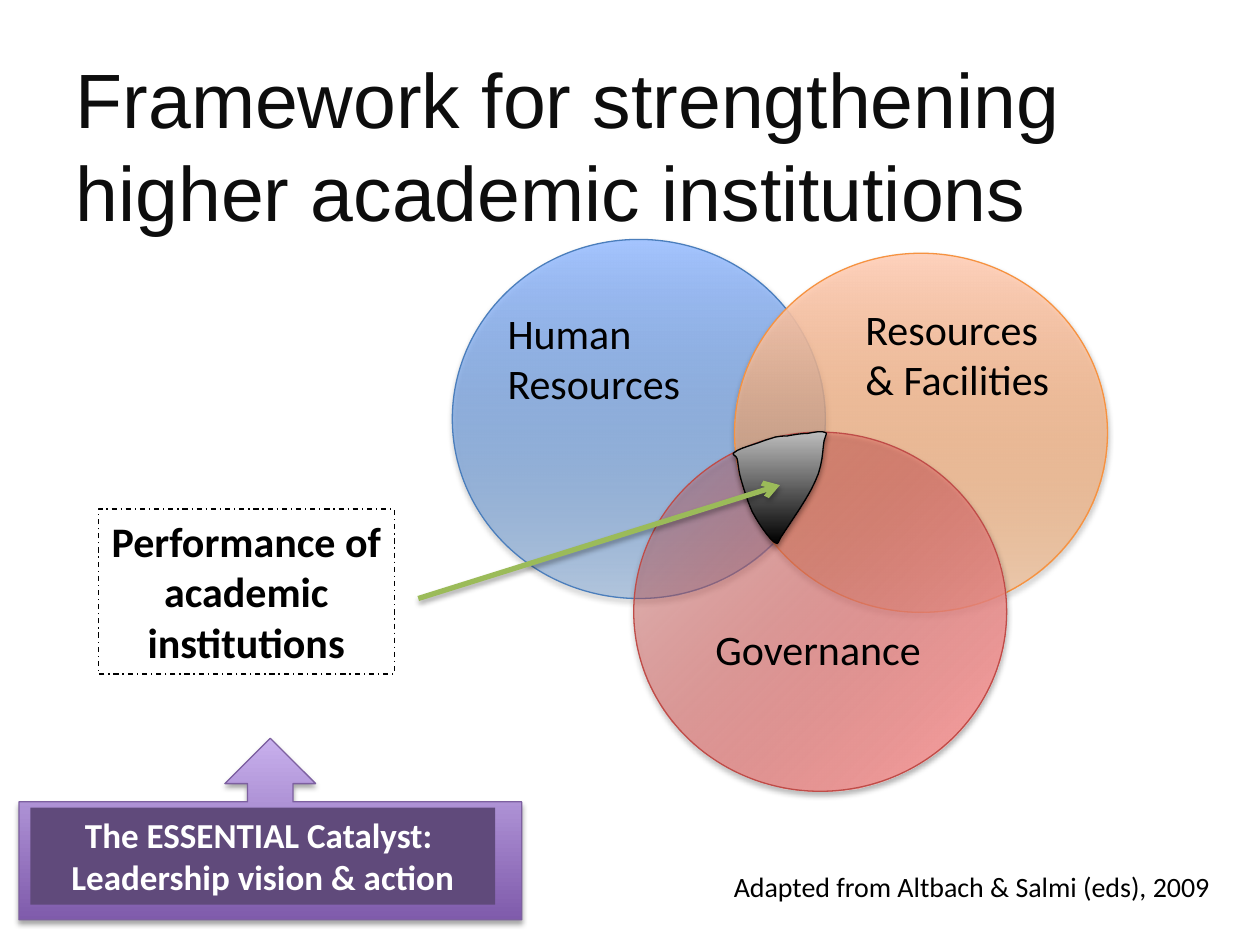
import pptx
import pptx.util
import pptx.dml.color
import pptx.enum.dml
import pptx.enum.shapes
import pptx.enum.text
import pptx.oxml.ns
from lxml import etree

Inches = pptx.util.Inches
Pt = pptx.util.Pt
RGBColor = pptx.dml.color.RGBColor
SHAPE = pptx.enum.shapes.MSO_SHAPE
ALIGN = pptx.enum.text.PP_ALIGN
AUTO_SIZE = pptx.enum.text.MSO_AUTO_SIZE
qn = pptx.oxml.ns.qn

BLACK = RGBColor(0x00, 0x00, 0x00)
WHITE = RGBColor(0xFF, 0xFF, 0xFF)
TITLE_INK = RGBColor(0x0D, 0x0D, 0x0D)
SILVER = RGBColor(0xBD, 0xBD, 0xBD)
GREEN = RGBColor(0x9B, 0xBB, 0x59)
PLUM = RGBColor(0x60, 0x4A, 0x7B)
PURPLE = RGBColor(0x7F, 0x5B, 0xAB)
LILAC = RGBColor(0xC8, 0xB0, 0xED)
PURPLE_EDGE = RGBColor(0x7D, 0x60, 0xA0)
BLUE = RGBColor(0x3F, 0x80, 0xCE)
SKY = RGBColor(0xA4, 0xC4, 0xFF)
BLUE_EDGE = RGBColor(0x4B, 0x7E, 0xBC)
ORANGE = RGBColor(0xFF, 0x95, 0x3E)
PEACH = RGBColor(0xFF, 0xD2, 0xBD)
ORANGE_EDGE = RGBColor(0xF6, 0x92, 0x40)
RED = RGBColor(0xD1, 0x40, 0x3C)
PINK = RGBColor(0xFF, 0xA6, 0xA5)
RED_EDGE = RGBColor(0xBF, 0x4C, 0x48)

SHADOW = (
    '<a:effectLst xmlns:a="http://schemas.openxmlformats.org/drawingml/2006/main">'
    '<a:outerShdw blurRad="40000" dist="23000" dir="5400000" rotWithShape="0">'
    '<a:srgbClr val="000000"><a:alpha val="35000"/></a:srgbClr>'
    '</a:outerShdw></a:effectLst>'
)


def style_shaded(shape, bottom, top, edge, opacity=100):
    shape.fill.gradient()
    shape.fill.gradient_angle = 90
    for stop, color in zip(shape.fill.gradient_stops, (bottom, top)):
        stop.color.rgb = color
    if opacity < 100:
        first_color = shape._element.spPr.find(".//" + qn("a:srgbClr"))
        etree.SubElement(first_color, qn("a:alpha"), val=str(opacity * 1000))
    shape.line.color.rgb = edge
    shape.line.width = Pt(0.75)
    shape._element.spPr.append(etree.fromstring(SHADOW))


def add_label(shapes, box, lines, size, color=BLACK, align=ALIGN.LEFT, bold=False):
    label = shapes.add_textbox(*map(Inches, box))
    frame = label.text_frame
    frame.word_wrap = True
    frame.auto_size = AUTO_SIZE.SHAPE_TO_FIT_TEXT
    frame.text = lines
    for paragraph in frame.paragraphs:
        paragraph.alignment = align
        paragraph.font.name = "Calibri"
        paragraph.font.size = Pt(size)
        paragraph.font.bold = bold
        paragraph.font.color.rgb = color
    return label


prs = pptx.Presentation()
prs.slide_width = Inches(10)
prs.slide_height = Inches(7.5)
slide = prs.slides.add_slide(prs.slide_layouts[5])

title = slide.shapes.title
title.left, title.top, title.width, title.height = map(Inches, (0.5, 0.52, 9, 1.25))
title.text_frame.text = "Framework for strengthening higher academic institutions"
title.text_frame.auto_size = AUTO_SIZE.NONE
heading = title.text_frame.paragraphs[0]
heading.alignment = ALIGN.LEFT
heading.font.name = "Arial"
heading.font.size = Pt(44)
heading.font.color.rgb = TITLE_INK

performance = add_label(slide.shapes, (0.78, 4.04, 2.35, 1.31),
                        "Performance of academic institutions", 24,
                        align=ALIGN.CENTER, bold=True)
performance.line.color.rgb = BLACK
performance.line.width = Pt(0.75)
performance.line.dash_style = pptx.enum.dml.MSO_LINE.DASH_DOT

catalyst = slide.shapes.add_group_shape().shapes
callout = catalyst.add_shape(SHAPE.UP_ARROW_CALLOUT, Inches(0.15), Inches(5.86),
                             Inches(3.99), Inches(1.44))
style_shaded(callout, PURPLE, LILAC, PURPLE_EDGE)
catalyst_label = add_label(catalyst, (0.24, 6.41, 3.69, 0.77),
                           "The ESSENTIAL Catalyst: \nLeadership vision & action",
                           20, WHITE, ALIGN.CENTER, True)
catalyst_label.fill.solid()
catalyst_label.fill.fore_color.rgb = PLUM

venn = slide.shapes.add_group_shape().shapes
circles = [
    (3.59, 1.9, BLUE, SKY, BLUE_EDGE, 30),
    (5.83, 2.01, ORANGE, PEACH, ORANGE_EDGE, 30),
    (5.03, 3.43, RED, PINK, RED_EDGE, 20),
]
for left, top, bottom_color, top_color, edge, opacity in circles:
    circle = venn.add_shape(SHAPE.OVAL, Inches(left), Inches(top),
                            Inches(2.96), Inches(2.85))
    style_shaded(circle, bottom_color, top_color, edge, opacity)

governance_gradient = circle._element.spPr.find(qn("a:gradFill"))
governance_gradient.remove(governance_gradient.find(qn("a:lin")))
radial = etree.SubElement(governance_gradient, qn("a:path"), path="circle")
etree.SubElement(radial, qn("a:fillToRect"), r="100000", b="100000")

for box, words in [
    ((3.93, 2.39, 1.73, 0.91), "Human Resources"),
    ((6.77, 2.36, 1.69, 0.91), "Resources & Facilities"),
]:
    add_label(venn, box, words, 24)

overlap_start = (5.83, 3.59)
overlap_curves = [
    ((5.86, 3.56), (5.98, 3.53), (6.03, 3.51)),
    ((6.08, 3.49), (6.12, 3.48), (6.15, 3.47)),
    ((6.19, 3.46), (6.25, 3.46), (6.25, 3.46)),
    ((6.3, 3.45), (6.36, 3.44), (6.41, 3.44)),
    ((6.46, 3.43), (6.52, 3.42), (6.54, 3.43)),
    ((6.57, 3.44), (6.56, 3.43), (6.54, 3.5)),
    ((6.53, 3.56), (6.53, 3.7), (6.47, 3.82)),
    ((6.42, 3.94), (6.27, 4.15), (6.22, 4.23)),
    ((6.16, 4.31), (6.19, 4.33), (6.14, 4.3)),
    ((6.1, 4.27), (6.01, 4.14), (5.97, 4.06)),
    ((5.93, 3.97), (5.9, 3.87), (5.88, 3.8)),
    ((5.86, 3.73), (5.86, 3.68), (5.85, 3.64)),
    ((5.84, 3.61), (5.8, 3.61), (5.83, 3.59)),
]
STEPS = 6
outline = []
curve_start = overlap_start
for control_1, control_2, curve_end in overlap_curves:
    for step in range(1, STEPS + 1):
        t = step / STEPS
        outline.append(tuple(
            Inches((1 - t) ** 3 * a + 3 * (1 - t) ** 2 * t * b
                   + 3 * (1 - t) * t ** 2 * c + t ** 3 * d)
            for a, b, c, d in zip(curve_start, control_1, control_2, curve_end)))
    curve_start = curve_end
builder = venn.build_freeform(*map(Inches, overlap_start))
builder.add_line_segments(outline, close=True)
overlap = builder.convert_to_shape()
style_shaded(overlap, BLACK, SILVER, BLACK)

add_label(venn, (5.58, 4.9, 1.95, 0.91), "Governance", 24)

pointer = slide.shapes.add_connector(pptx.enum.shapes.MSO_CONNECTOR.STRAIGHT,
                                     Inches(3.32), Inches(4.75),
                                     Inches(6.19), Inches(3.85))
pointer.line.color.rgb = GREEN
pointer.line.width = Pt(3)
etree.SubElement(pointer.line._get_or_add_ln(), qn("a:tailEnd"), type="arrow")
pointer._element.spPr.append(etree.fromstring(SHADOW))

add_label(slide.shapes, (5.15, 6.85, 4.55, 0.64),
          "Adapted from Altbach & Salmi (eds), 2009", 16, align=ALIGN.RIGHT)

prs.save("out.pptx")
